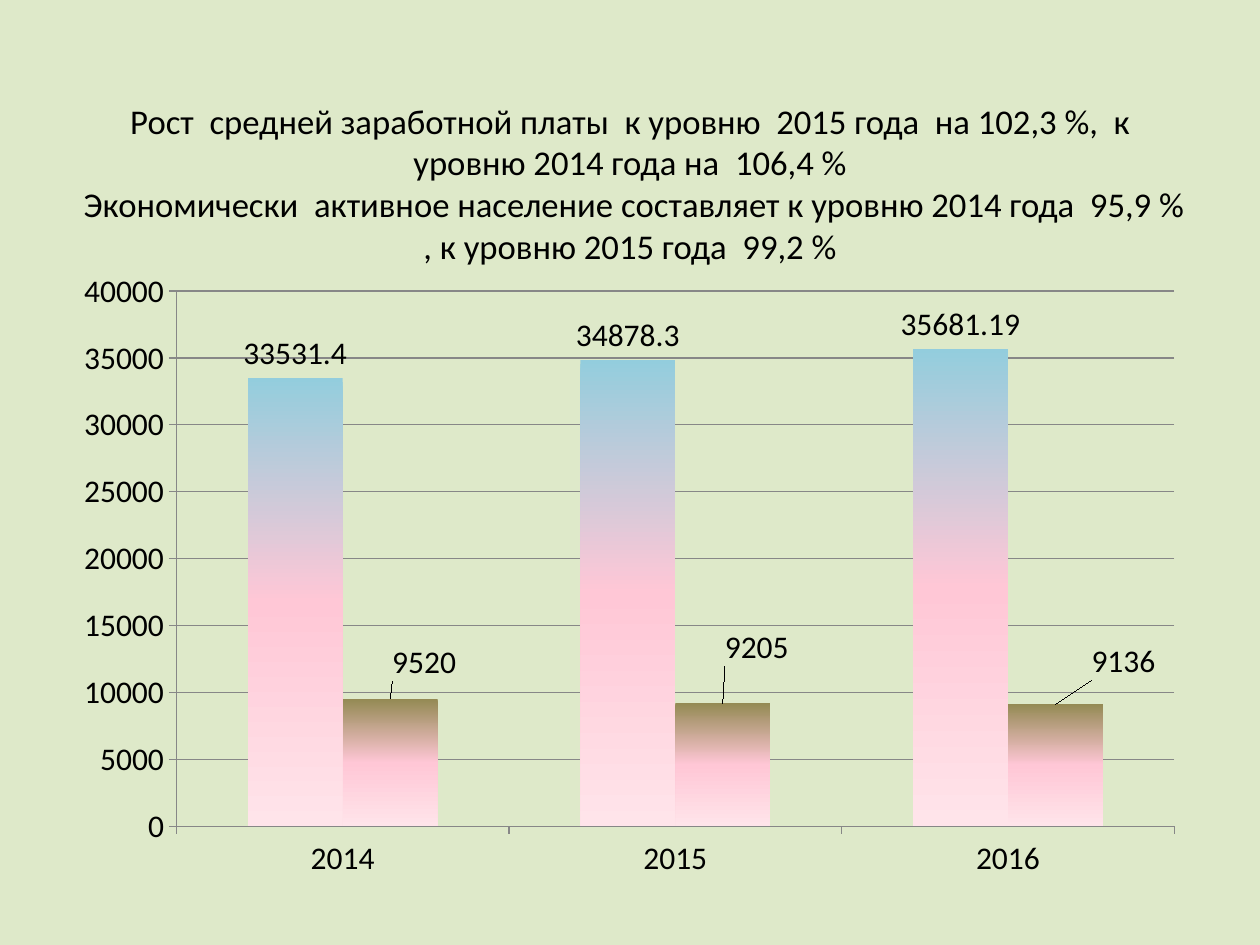
"""Slide on wage growth and the economically active population, 2014 to 2016."""
from copy import deepcopy

from lxml import etree
from pptx import Presentation, util as u
from pptx.chart.data import CategoryChartData
from pptx.dml.color import RGBColor
from pptx.enum import chart as c, text as t

NS = "http://schemas.openxmlformats.org/drawingml/2006/chart"


def color(value):
    return RGBColor.from_string(value)


def add_layout(parent, index, **values):
    layout = etree.Element(f"{{{NS}}}layout")
    manual = etree.SubElement(layout, f"{{{NS}}}manualLayout")
    for tag, value in values.items():
        etree.SubElement(manual, f"{{{NS}}}{tag}").set("val", str(value))
    parent.insert(index, layout)


deck = Presentation()
deck.slide_width, deck.slide_height = u.Inches(10), u.Inches(7.5)
W, H = deck.slide_width, deck.slide_height
slide = deck.slides.add_slide(deck.slide_layouts[6])
slide.background.fill.solid()
slide.background.fill.fore_color.rgb = color("DEE9C9")
left, width = int(W * 0.05), int(W * 0.9)

heading = slide.shapes.add_textbox(left, u.Inches(0.29), width, u.Inches(2.12)).text_frame
heading.word_wrap = True
heading.vertical_anchor = t.MSO_ANCHOR.MIDDLE
heading.margin_top = u.Inches(0.25)
heading.text = (
    "Рост  средней заработной платы  к уровню  2015 года  на 102,3 %,  к уровню 2014 года на  106,4 %\n"
    " Экономически  активное население составляет к уровню 2014 года  95,9 % , к уровню 2015 года  99,2 %"
)
for paragraph in heading.paragraphs:
    paragraph.alignment = t.PP_ALIGN.CENTER
    for run in paragraph.runs:
        run.font.size, run.font.name = u.Pt(19.8), "Calibri"
        run.font.color.rgb = color("000000")

figures = CategoryChartData()
figures.categories = ["2014", "2015", "2016"]
figures.add_series("Series 1", [33531.4, 34878.3, 35681.19])
figures.add_series("Series 2", [9520, 9205, 9136])
chart = slide.shapes.add_chart(
    c.XL_CHART_TYPE.COLUMN_CLUSTERED, left, u.Inches(2.06), width, int(H * 2 / 3), figures
).chart
chart.has_title = chart.has_legend = False
chart.font.size, chart.font.name = u.Pt(18), "Calibri"
chart.font.color.rgb = color("000000")

years, amounts = chart.category_axis, chart.value_axis
amounts.minimum_scale, amounts.maximum_scale, amounts.major_unit = 0, 40000, 5000
amounts.has_major_gridlines = True
for part in (years, amounts, amounts.major_gridlines):
    part.format.line.color.rgb = color("878787")
    part.format.line.width = u.Pt(0.75)
for axis in (years, amounts):
    axis.major_tick_mark = c.XL_TICK_MARK.OUTSIDE

columns = chart.plots[0]
columns.gap_width, columns.overlap = 150, 0
columns.vary_by_categories = False
for series, top_color in zip(columns.series, ("93CDDD", "948A54")):
    fill = series.format.fill
    fill.gradient()
    fill.gradient_angle = 270
    stop_list = chart.element.xpath(".//a:gsLst")[-1]
    stop_list.append(deepcopy(stop_list[0]))
    for stop, place, shade in zip(fill.gradient_stops, (0, 0.5, 1), (top_color, "FFC7D6", "FFE4EA")):
        stop.position = place
        stop.color.rgb = color(shade)
    series.data_labels.show_value = True
    series.data_labels.position = c.XL_LABEL_POSITION.OUTSIDE_END

population = columns.series[1]
for i in range(3):
    population.points[i].data_label.position = c.XL_LABEL_POSITION.OUTSIDE_END
shifts = ((0.03, -0.02), (0.03, -0.05), (0.06, -0.03))
for label, (dx, dy) in zip(chart.element.xpath(".//c:dLbl"), shifts):
    add_layout(label, 1, x=dx, y=dy)

plot_area = chart.element.xpath(".//c:plotArea")[0]
for old in plot_area.xpath("./c:layout"):
    plot_area.remove(old)
add_layout(plot_area, 0, layoutTarget="inner", xMode="edge", yMode="edge", x=0.1, y=0.05, w=0.88, h=0.85)

deck.save("out.pptx")
